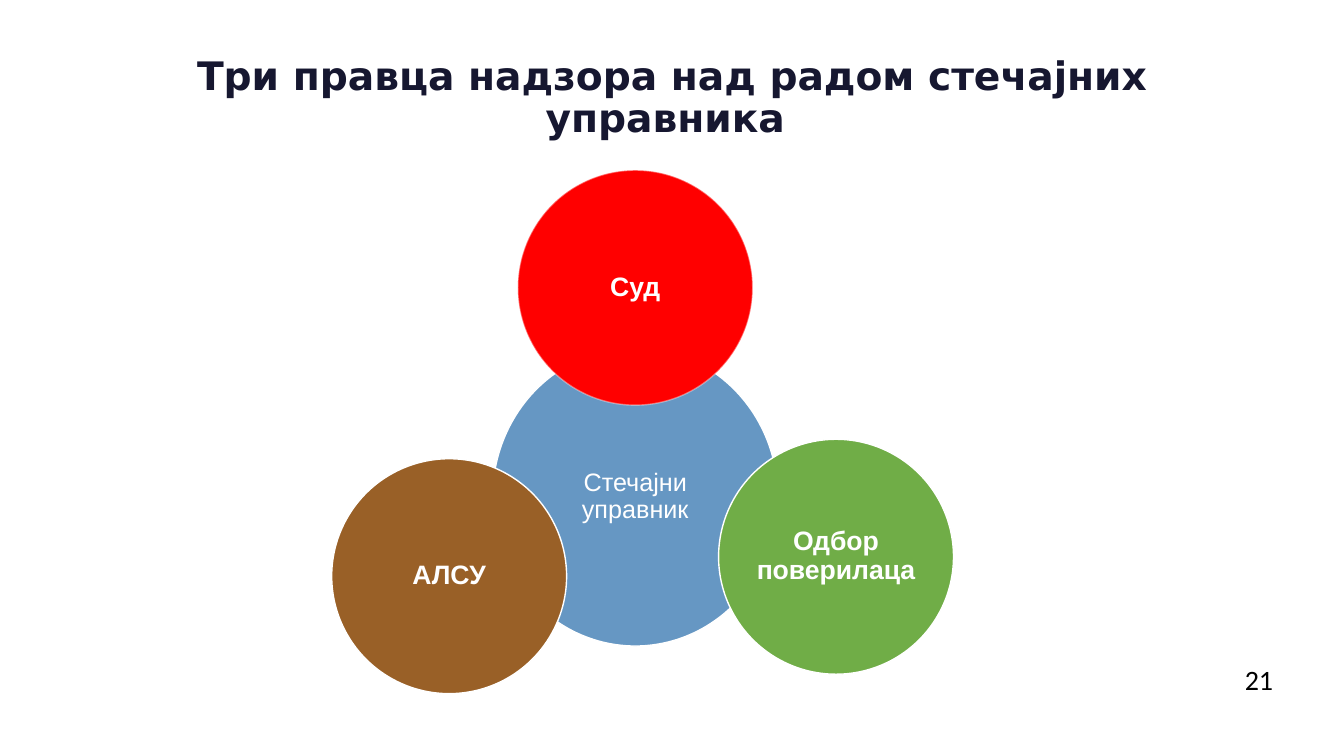
import pptx
import pptx.util
import pptx.dml.color
import pptx.enum.shapes
import pptx.enum.text
import pptx.oxml.ns
import lxml.etree

Cm, Pt = pptx.util.Cm, pptx.util.Pt
RGBColor = pptx.dml.color.RGBColor
PP_ALIGN = pptx.enum.text.PP_ALIGN
MSO_ANCHOR = pptx.enum.text.MSO_ANCHOR

NAVY = RGBColor(0x16, 0x17, 0x30)
BLUE = RGBColor(0x00, 0x53, 0x9B)
RED = RGBColor(0xFF, 0x00, 0x00)
BROWN = RGBColor(0x99, 0x60, 0x27)
GREEN = RGBColor(0x70, 0xAD, 0x47)
WHITE = RGBColor(0xFF, 0xFF, 0xFF)
BLACK = RGBColor(0x00, 0x00, 0x00)

# Content
HEADING = "Три правца надзора над радом стечајних управника "
PAGE = "21"
SUPERVISOR_SIZE = (5.92, 5.92)
# label, centre (cm), size (cm), fill, fill opacity %, line opacity %, font
CIRCLES = [
    ("Стечајни управник", (16.01, 12.52), (7.19, 7.52), BLUE, 60, 100,
     {"size": Pt(18), "bold": False}),
    ("Суд", (16.01, 7.25), SUPERVISOR_SIZE, RED, 100, 40,
     {"size": Pt(19), "bold": True}),
    ("АЛСУ", (11.32, 14.52), SUPERVISOR_SIZE, BROWN, 100, 100,
     {"size": Pt(19), "bold": True}),
    ("Одбор поверилаца", (21.07, 14.03), SUPERVISOR_SIZE, GREEN, 100, 100,
     {"size": Pt(19), "bold": True}),
]


def set_all(target, values):
    for name, value in values.items():
        setattr(target, name, value)


def write(frame, text, color, font, paragraph_format, frame_format):
    set_all(frame, frame_format)
    paragraph = frame.paragraphs[0]
    set_all(paragraph, paragraph_format)
    run = paragraph.add_run()
    run.text = text
    set_all(run.font, font)
    run.font.color.rgb = color


def set_opacity(shape, holder, percent):
    """Add an alpha value to the solid colour of the fill or the line."""
    if percent < 100:
        qn = pptx.oxml.ns.qn
        steps = [qn("p:spPr")] + [qn(tag) for tag in holder]
        color = shape.element.find("/".join(steps + [qn("a:solidFill"), qn("a:srgbClr")]))
        lxml.etree.SubElement(color, qn("a:alpha")).set("val", str(percent * 1000))


def add_circle(slide, label, centre, size, fill, fill_opacity, line_opacity, font):
    left, top = (c - s / 2 for c, s in zip(centre, size))
    circle = slide.shapes.add_shape(
        pptx.enum.shapes.MSO_SHAPE.OVAL, Cm(left), Cm(top), *map(Cm, size))
    circle.shadow.inherit = False
    circle.fill.solid()
    circle.fill.fore_color.rgb = fill
    circle.line.color.rgb = WHITE
    circle.line.width = Pt(1)
    set_opacity(circle, [], fill_opacity)
    set_opacity(circle, ["a:ln"], line_opacity)
    margins = {f"margin_{side}": Cm(0.08) for side in ("left", "top", "right", "bottom")}
    write(circle.text_frame, label, WHITE, {"name": "Arial", **font},
          {"alignment": PP_ALIGN.CENTER, "line_spacing": 0.9},
          {"word_wrap": True, "vertical_anchor": MSO_ANCHOR.MIDDLE, **margins})


def main():
    deck = pptx.Presentation()
    set_all(deck, {"slide_width": Cm(33.87), "slide_height": Cm(19.05)})
    slide = deck.slides.add_slide(deck.slide_layouts[5])

    # Heading
    heading = slide.shapes.title
    set_all(heading, {"left": Cm(2.33), "top": Cm(1.27),
                      "width": Cm(29.21), "height": Cm(2.41)})
    write(heading.text_frame, HEADING, NAVY,
          {"name": "DejaVu Sans", "size": Pt(28), "bold": True},
          {"alignment": PP_ALIGN.CENTER, "line_spacing": 0.9},
          {"word_wrap": True, "vertical_anchor": MSO_ANCHOR.BOTTOM,
           "auto_size": pptx.enum.text.MSO_AUTO_SIZE.NONE})

    # Administrator and the three supervisors around it
    for circle in CIRCLES:
        add_circle(slide, *circle)

    # Page number
    page = slide.shapes.add_textbox(Cm(31.12), Cm(16.56), Cm(1.35), Cm(1.12))
    write(page.text_frame, PAGE, BLACK, {"name": "Calibri", "size": Pt(20)},
          {"alignment": PP_ALIGN.LEFT}, {"word_wrap": True})

    deck.save("out.pptx")


if __name__ == "__main__":
    main()
